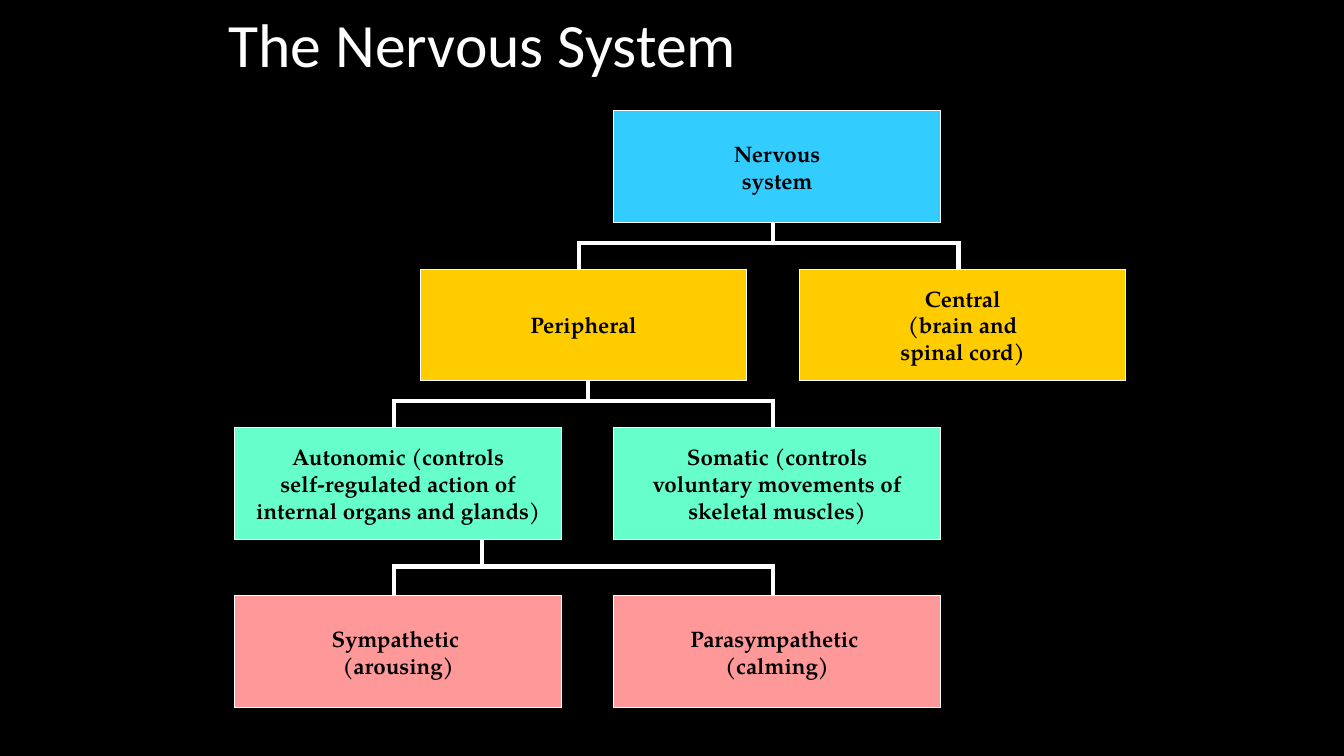
from dataclasses import dataclass

from lxml.etree import SubElement
from pptx import Presentation
from pptx.dml.color import RGBColor
from pptx.enum.shapes import MSO_CONNECTOR, MSO_SHAPE
from pptx.enum.text import MSO_ANCHOR, PP_ALIGN
from pptx.oxml.ns import qn
from pptx.util import Pt

TITLE = "The Nervous System"
BOXES = {
    "nervous": (2, 0, "blue", ["Nervous", "system"]),
    "peripheral": (1, 1, "yellow", ["Peripheral"]),
    "central": (3, 1, "yellow", ["Central", "(brain and", "spinal cord)"]),
    "autonomic": (0, 2, "green", [
        "Autonomic (controls", "self-regulated action of", "internal organs and glands)"]),
    "somatic": (2, 2, "green", [
        "Somatic (controls", "voluntary movements of", "skeletal muscles)"]),
    "sympathetic": (0, 3, "pink", ["Sympathetic ", "(arousing)"]),
    "parasympathetic": (2, 3, "pink", ["Parasympathetic ", "(calming)"]),
}
BRANCHES = [
    ("peripheral", "central", 552.2, 173.5),
    ("autonomic", "somatic", 419.8, 286.6),
    ("sympathetic", "parasympathetic", 344.2, 404.6),
]


@dataclass(frozen=True)
class Theme:
    black = RGBColor.from_string("000000")
    white = RGBColor.from_string("FFFFFF")
    blue = RGBColor.from_string("33CCFF")
    yellow = RGBColor.from_string("FFCC00")
    green = RGBColor.from_string("66FFCC")
    pink = RGBColor.from_string("FF9999")
    title_font = "Calibri"
    box_font = "TeX Gyre Pagella"
    title_size = Pt(44)
    box_size = Pt(16)
    outline = Pt(0.75)
    branch = Pt(3)


THEME = Theme()
COLUMNS = (167.8, 300.2, 438.5, 571)
ROWS = (79.2, 192.2, 305.3, 425.5)
BOX_WIDTH, BOX_HEIGHT = 233.3, 79.9
DROP_SHIFT = 3
BRANCH_REACH = 21.6
CORNER = 1.5


def add_title(page):
    box = page.shapes.add_textbox(Pt(156.2), Pt(-10.8), Pt(648), Pt(90))
    frame = box.text_frame
    frame.word_wrap = True
    frame.vertical_anchor = MSO_ANCHOR.MIDDLE
    para = frame.paragraphs[0]
    para.text = TITLE
    para.line_spacing = 0.9
    para.font.name = THEME.title_font
    para.font.size = THEME.title_size
    para.font.color.rgb = THEME.white


def add_line(page, start_x, start_y, end_x, end_y):
    line = page.shapes.add_connector(
        MSO_CONNECTOR.STRAIGHT, Pt(start_x), Pt(start_y), Pt(end_x), Pt(end_y))
    line.line.color.rgb = THEME.white
    line.line.width = THEME.branch
    SubElement(line._element.spPr, qn("a:effectLst"))


def add_branch(page, left_child, right_child, stem, bar):
    left, right = (
        COLUMNS[BOXES[child][0]] + BOX_WIDTH / 2 - DROP_SHIFT
        for child in (left_child, right_child))
    add_line(page, left, bar, right, bar)
    add_line(page, stem, bar - BRANCH_REACH, stem, bar)
    for drop in (left, right):
        add_line(page, drop, bar - CORNER, drop, bar + BRANCH_REACH)


def add_box(page, column, row, color, lines):
    box = page.shapes.add_shape(
        MSO_SHAPE.RECTANGLE, Pt(COLUMNS[column]), Pt(ROWS[row]),
        Pt(BOX_WIDTH), Pt(BOX_HEIGHT))
    box.shadow.inherit = False
    box.fill.solid()
    box.fill.fore_color.rgb = getattr(THEME, color)
    box.line.color.rgb = THEME.white
    box.line.width = THEME.outline
    frame = box.text_frame
    frame.word_wrap = False
    frame.vertical_anchor = MSO_ANCHOR.MIDDLE
    frame.text = "\n".join(lines)
    for para in frame.paragraphs:
        para.alignment = PP_ALIGN.CENTER
        para.font.name = THEME.box_font
        para.font.size = THEME.box_size
        para.font.bold = True
        para.font.color.rgb = THEME.black


def main():
    deck = Presentation()
    deck.slide_width, deck.slide_height = Pt(960), Pt(540)
    page = deck.slides.add_slide(deck.slide_layouts[6])
    page.background.fill.solid()
    page.background.fill.fore_color.rgb = THEME.black
    add_title(page)
    for branch in BRANCHES:
        add_branch(page, *branch)
    for box in BOXES.values():
        add_box(page, *box)
    deck.save("out.pptx")


if __name__ == "__main__":
    main()
